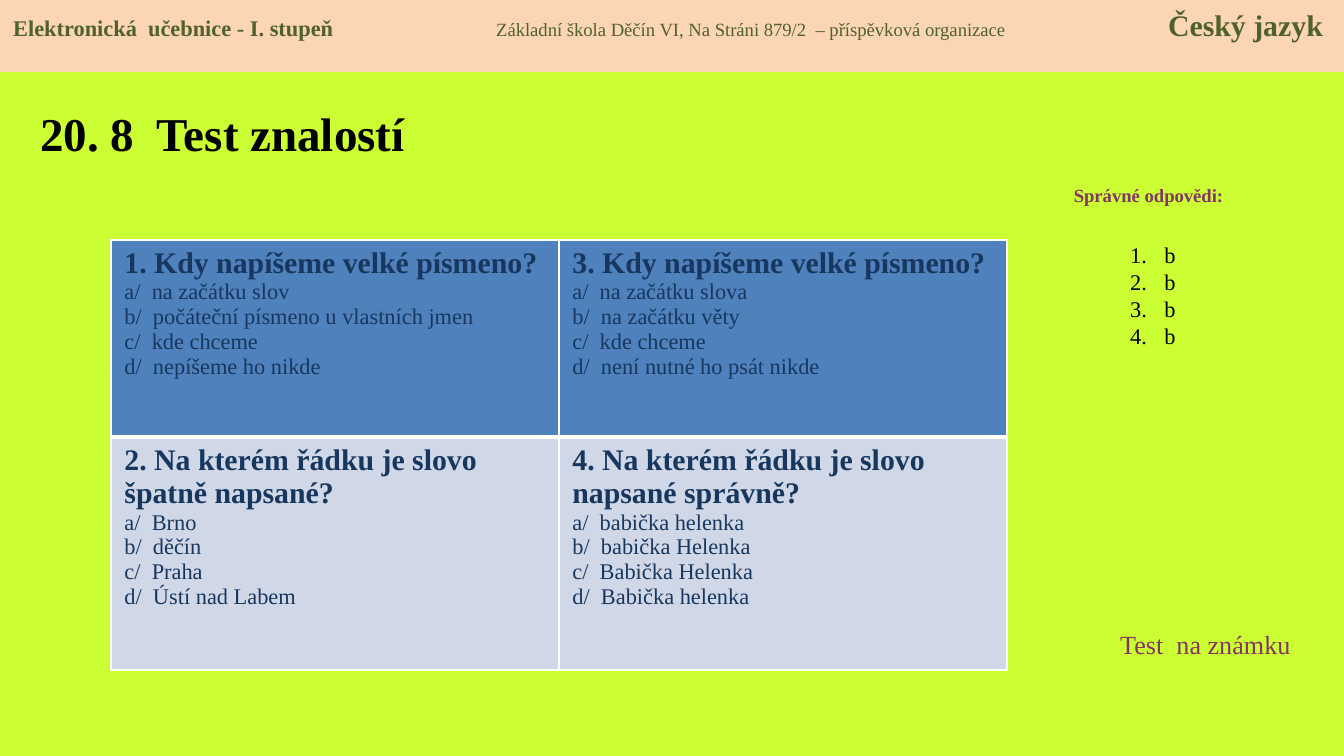
import pptx
import pptx.util
import pptx.dml.color
import pptx.enum.shapes
import pptx.enum.text
import pptx.oxml.ns
import lxml.etree

RGB = pptx.dml.color.RGBColor
LIME = RGB(0xCC, 0xFF, 0x33)
PEACH = RGB(0xFC, 0xD5, 0xB5)
OLIVE = RGB(0x4F, 0x62, 0x28)
PLUM = RGB(0x81, 0x37, 0x63)
NAVY = RGB(0x17, 0x37, 0x5E)
BLUE = RGB(0x4F, 0x81, 0xBD)
PALE = RGB(0xD0, 0xD8, 0xE8)
BLACK = RGB(0, 0, 0)
FONT = "Times New Roman"
ALIGN = pptx.enum.text.PP_ALIGN
ANCHOR = pptx.enum.text.MSO_ANCHOR

HEAD = [
    ("Elektronická  učebnice - I. stupeň", 12, True),
    ("\tZákladní škola Děčín VI, Na Stráni 879/2  – příspěvková organizace", 10, False),
    ("\tČeský jazyk", 16, True),
]
HEAD_TABS = [483, 1155]
TITLE = "20. 8  Test znalostí"
KEY_TITLE = "Správné odpovědi:"
KEY = ["b", "b", "b", "b"]
GRADE = "Test  na známku"
# Each cell: heading lines, then choices
QUIZ = [
    [
        (["1. Kdy napíšeme velké písmeno?"],
         ["na začátku slov", "počáteční písmeno u vlastních jmen",
          "kde chceme", "nepíšeme ho nikde"]),
        (["3. Kdy napíšeme velké písmeno?"],
         ["na začátku slova", "na začátku věty",
          "kde chceme", "není nutné ho psát nikde"]),
    ],
    [
        (["2. Na kterém řádku je slovo", "špatně napsané?"],
         ["Brno", "děčín", "Praha", "Ústí nad Labem"]),
        (["4. Na kterém řádku je slovo napsané správně?"],
         ["babička helenka", "babička Helenka",
          "Babička Helenka", "Babička helenka"]),
    ],
]
ROWS = [(197, BLUE, 3), (233, PALE, 1)]  # height, fill, bottom border in pt
COL = 448


def px(n):
    return pptx.util.Emu(round(n * 914400 / 134.4))


def sub(parent, tag, **attrs):
    node = lxml.etree.SubElement(parent, pptx.oxml.ns.qn(tag))
    for name, value in attrs.items():
        node.set(name, str(value))
    return node


def write(para, text, size=12, bold=False, color=BLACK, align=None):
    run = para.add_run()
    run.text = text
    run.font.name = FONT
    run.font.size = pptx.util.Pt(size)
    run.font.bold = bold
    run.font.color.rgb = color
    if align is not None:
        para.alignment = align


def lines(frame, count):
    """Yield the first paragraph of a frame, then new ones, count in all."""
    yield frame.paragraphs[0]
    for _ in range(count - 1):
        yield frame.add_paragraph()


def box(slide, x, y, w, h, anchor=ANCHOR.TOP):
    frame = slide.shapes.add_textbox(px(x), px(y), px(w), px(h)).text_frame
    frame.word_wrap = True
    frame.vertical_anchor = anchor
    return frame


def border(cell, bottom):
    props = cell._tc.get_or_add_tcPr()
    for i, side in enumerate("LRTB"):
        width = bottom if side == "B" else 1
        line = lxml.etree.Element(pptx.oxml.ns.qn("a:ln" + side))
        line.set("w", str(pptx.util.Pt(width)))
        sub(sub(line, "a:solidFill"), "a:srgbClr", val="FFFFFF")
        props.insert(i, line)


def draw_head(slide):
    kind = pptx.enum.shapes.MSO_SHAPE.RECTANGLE
    bar = slide.shapes.add_shape(kind, 0, 0, px(1344), px(72))
    bar.shadow.inherit = False
    bar.fill.solid()
    bar.fill.fore_color.rgb = PEACH
    bar.line.fill.background()
    frame = bar.text_frame
    frame.word_wrap = True
    frame.vertical_anchor = ANCHOR.TOP
    para = frame.paragraphs[0]
    for text, size, bold in HEAD:
        write(para, text, size, bold, OLIVE, ALIGN.LEFT)
    tabs = sub(para._p.get_or_add_pPr(), "a:tabLst")
    for stop in HEAD_TABS:
        sub(tabs, "a:tab", pos=px(stop), algn="l")


def draw_quiz(slide):
    high = sum(row[0] for row in ROWS)
    table = slide.shapes.add_table(
        2, 2, px(111), px(240), px(2 * COL), px(high)).table
    for col in table.columns:
        col.width = px(COL)
    for r, (height, fill, bottom) in enumerate(ROWS):
        table.rows[r].height = px(height)
        for c, (heads, picks) in enumerate(QUIZ[r]):
            cell = table.cell(r, c)
            cell.fill.solid()
            cell.fill.fore_color.rgb = fill
            border(cell, bottom)
            texts = [(head, 16, True) for head in heads]
            texts += [(f"{mark}/  {pick}", 12, False)
                      for mark, pick in zip("abcd", picks)]
            paras = lines(cell.text_frame, len(texts))
            for para, (text, size, bold) in zip(paras, texts):
                write(para, text, size, bold, NAVY)


def draw_key(slide):
    para = box(slide, 1043, 177, 211, 36).paragraphs[0]
    write(para, KEY_TITLE, 10, True, PLUM, ALIGN.CENTER)
    frame = box(slide, 1117, 235, 74, 149)
    for para, text in zip(lines(frame, len(KEY)), KEY):
        write(para, text)
        props = para._p.get_or_add_pPr()
        props.set("marL", str(px(34)))
        props.set("indent", str(-px(34)))
        sub(props, "a:buFont", typeface=FONT)
        sub(props, "a:buAutoNum", type="arabicPeriod")


def main():
    deck = pptx.Presentation()
    deck.slide_width, deck.slide_height = px(1344), px(756)
    slide = deck.slides.add_slide(deck.slide_layouts[6])
    slide.background.fill.solid()
    slide.background.fill.fore_color.rgb = LIME
    title = box(slide, 27, 89, 429, 87, ANCHOR.MIDDLE)
    write(title.paragraphs[0], TITLE, 25.2, True)
    draw_quiz(slide)
    draw_key(slide)
    grade = box(slide, 1107, 622, 211, 46)
    write(grade.paragraphs[0], GRADE, 14, color=PLUM)
    draw_head(slide)
    deck.save("out.pptx")


if __name__ == "__main__":
    main()
